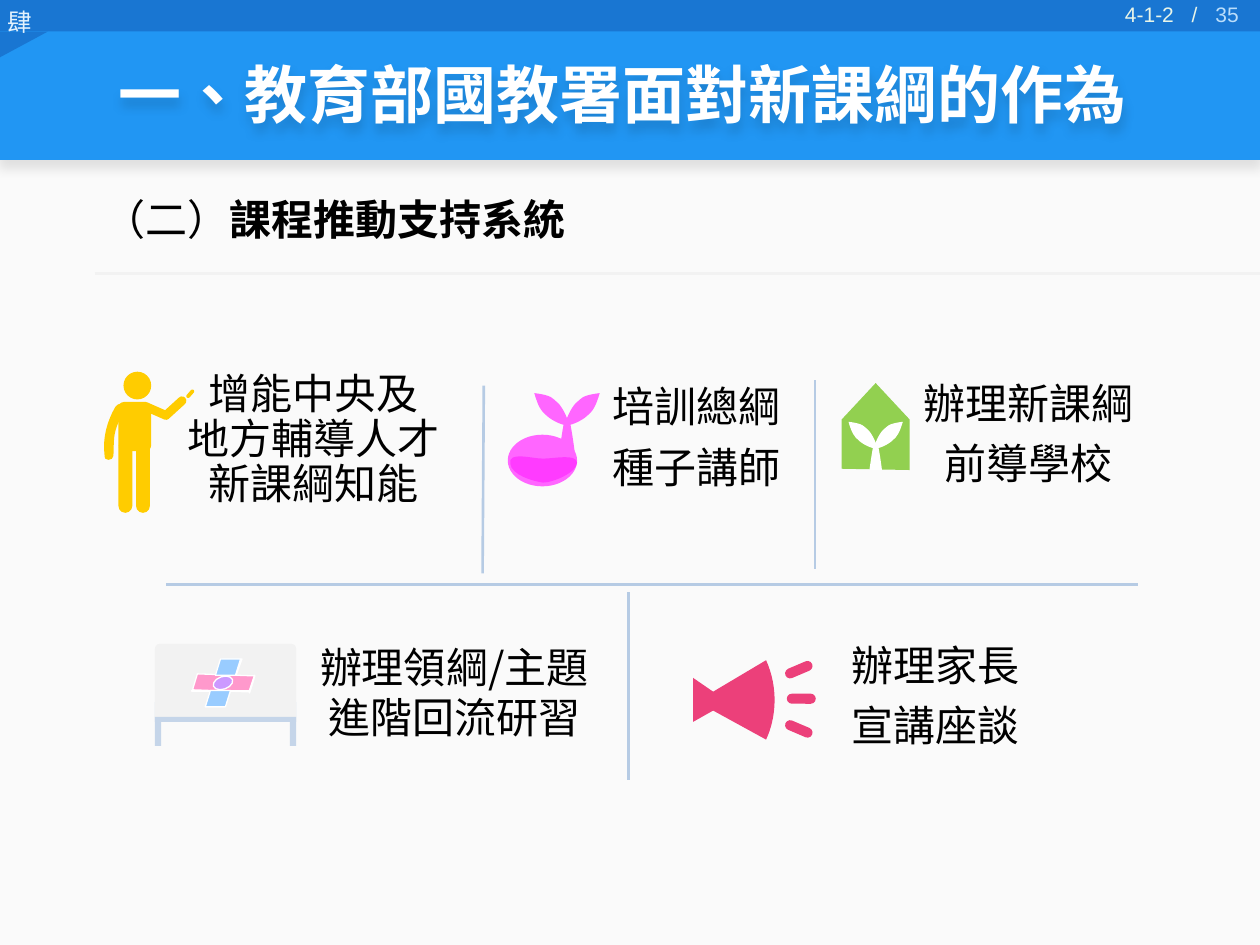
from lxml.etree import SubElement
from pptx import Presentation
from pptx.dml.color import RGBColor
from pptx.enum.shapes import MSO_CONNECTOR, MSO_SHAPE
from pptx.enum.text import MSO_ANCHOR, MSO_AUTO_SIZE, PP_ALIGN
from pptx.oxml.ns import qn
from pptx.util import Inches, Pt

COLORS = {
    "page": "FAFAFA", "header": "2196F3", "bar": "1976D2", "white": "FFFFFF", "black": "000000",
    "chapter": "E3F2FD", "number": "BBDEFB", "section": "E8F5E9", "divider": "B6CBE4",
    "rule": "F2F2F2", "green": "92D050", "yellow": "FFCC00", "pink": "FF66FF", "magenta": "FF3BFF",
    "frame": "C5D5E9", "rose": "FF99CC", "sky": "99CCFF", "lilac": "CC99FF", "red": "EC407A",
}
CJK = "Noto Sans CJK SC"
RECT, ROUND, OVAL = MSO_SHAPE.RECTANGLE, MSO_SHAPE.ROUNDED_RECTANGLE, MSO_SHAPE.OVAL
SLANTED = MSO_SHAPE.PARALLELOGRAM

presentation = Presentation()
presentation.slide_width, presentation.slide_height = Inches(10), Inches(7.5)
slide = presentation.slides.add_slide(presentation.slide_layouts[6])


def add_preset(kind, box, color, adjustment=None, rotation=0, outlined=False):
    shape = slide.shapes.add_shape(kind, *map(Inches, box))
    shape.shadow.inherit = False
    shape.rotation = rotation
    if adjustment is not None:
        shape.adjustments[0] = adjustment
    shape.fill.solid()
    shape.fill.fore_color.rgb = RGBColor.from_string(COLORS[color])
    if outlined:
        shape.line.color.rgb = RGBColor.from_string(COLORS["white"])
        shape.line.width = Pt(0.75)
    else:
        shape.line.fill.background()
    return shape


def add_outline(segments, color, origin=(0, 0), scale=(1, 1)):
    """Draw a closed outline: pairs are straight corners, six numbers are a cubic curve."""
    points = [segment[i:i + 2] for segment in segments for i in range(0, len(segment), 2)]
    placed = [tuple(Inches(origin[axis] + scale[axis] * point[axis]) for axis in (0, 1))
              for point in points]
    builder = slide.shapes.build_freeform(*placed[0])
    builder.add_line_segments(placed[1:], close=True)
    shape = builder.convert_to_shape()
    corners = iter(list(shape._element.spPr.iter(qn("a:lnTo"))))
    for segment in segments[1:]:
        corner = next(corners)
        if len(segment) == 6:
            corner.tag = qn("a:cubicBezTo")
            for _ in range(2):
                extra = next(corners)
                corner.append(extra[0])
                extra.getparent().remove(extra)
    shape.shadow.inherit = False
    shape.fill.solid()
    shape.fill.fore_color.rgb = RGBColor.from_string(COLORS[color])
    shape.line.fill.background()
    return shape


# Page and header
add_preset(RECT, (-0.01, 0.44, 10.03, 7.06), "page")
header = add_preset(ROUND, (-0.01, 0, 10.01, 1.27), "header", 0)
add_preset(ROUND, (-0.01, -0.02, 10.01, 0.27), "bar", 0)
add_outline([(-0.01, 0.25), (-0.01, 0.32, -0.01, 0.39, -0.01, 0.46), (0.38, 0.25)], "bar")

# Teacher
add_preset(MSO_SHAPE.FLOWCHART_CONNECTOR, (0.98, 2.95, 0.22, 0.22), "yellow")
add_preset(ROUND, (0.94, 3.19, 0.26, 0.39), "yellow")
for box, rotation in (
    ((0.94, 3.49, 0.11, 0.58), 0), ((1.08, 3.49, 0.11, 0.58), 0),
    ((1.35, 3.12, 0.07, 0.23), 47.7), ((1.21, 3.15, 0.07, 0.23), 293.6),
    ((1.47, 3.11, 0.08, 0.03), 311.4),
):
    add_preset(ROUND, box, "yellow", 0.5, rotation)
add_outline([(0.99, 3.27), (1, 3.23, 0.99, 3.21, 0.98, 3.21), (0.95, 3.19, 0.92, 3.22, 0.91, 3.24),
             (0.8, 3.44, 0.83, 3.59, 0.83, 3.61), (0.83, 3.64, 0.84, 3.65, 0.86, 3.65),
             (0.88, 3.65, 0.9, 3.64, 0.9, 3.62), (0.91, 3.53, 0.88, 3.42, 0.99, 3.27)], "yellow")

# House and seed, each with the same sprout
add_outline([(6.68, 3.72), (6.68, 3.33), (6.95, 3.04), (7.22, 3.33),
             (7.22, 3.46, 7.22, 3.59, 7.22, 3.73)], "green")
leaf = [(0.01, 0.03), (0.02, 0.01, -0.03, -0.1, -0.07, -0.14),
        (-0.12, -0.18, -0.11, -0.2, -0.26, -0.22), (-0.23, -0.12, -0.21, -0.08, -0.16, -0.04),
        (-0.12, 0, -0.01, 0.05, 0.01, 0.03)]
stem = [(-0.02, 0), (0.02, 0), (0.03, 0.03, 0.05, 0.16, 0.06, 0.24), (-0.06, 0.24),
        (-0.05, 0.17, -0.03, 0.03, -0.02, 0)]
for origin, size, color in (((6.95, 3.53), 0.83, "white"), ((4.5, 3.34), 1, "pink")):
    for outline, side in ((leaf, 1), (stem, 1), (leaf, -1)):
        add_outline(outline, color, origin, (side * size, size))
add_preset(OVAL, (4.03, 3.45, 0.55, 0.41), "pink")
add_outline([(4.05, 3.68), (4.03, 3.58, 4.22, 3.64, 4.31, 3.64), (4.4, 3.64, 4.57, 3.6, 4.58, 3.67),
             (4.58, 3.75, 4.39, 3.83, 4.31, 3.83), (4.23, 3.82, 4.06, 3.77, 4.05, 3.68)], "magenta")

# Table with crossed sheets
for left in (1.23, 2.3):
    add_preset(RECT, (left, 5.57, 0.05, 0.35), "frame")
add_preset(ROUND, (1.23, 5.11, 1.12, 0.62), "rule", 0.06)
add_preset(RECT, (1.77, 5.15, 0.04, 1.12), "frame", rotation=270)
add_preset(SLANTED, (1.63, 5.23, 0.29, 0.38), "white", 0.47, outlined=True)
sheet = add_preset(SLANTED, (1.65, 5.2, 0.25, 0.44), "rose", 0.47, 287, True)
sheet._element.spPr.find(qn("a:xfrm")).set("flipV", "1")
add_preset(RECT, (1.52, 5.48, 0.46, 0.01), "rose", outlined=True)
for left, top in ((1.63, 5.48), (1.71, 5.23)):
    add_preset(SLANTED, (left, top, 0.2, 0.13), "sky", 0.31, outlined=True)
add_preset(OVAL, (1.69, 5.37, 0.16, 0.1), "lilac", rotation=341.2, outlined=True)
edge = add_outline([(1.98, 5.5), (1.98, 5.48), (2.02, 5.36), (2.02, 5.37)], "rose")
edge.line.color.rgb = RGBColor.from_string(COLORS["white"])
edge.line.width = Pt(0.75)

# Megaphone
add_outline([(5.5, 5.38), (5.5, 5.5, 5.5, 5.62, 5.5, 5.73), (5.66, 5.64), (6.08, 5.87),
             (6.16, 5.7, 6.18, 5.46, 6.08, 5.24), (5.66, 5.49)], "red")
for left, top, rotation in ((6.32, 5.43, 270), (6.3, 5.2, 246.9), (6.3, 5.67, 293.1)):
    add_preset(ROUND, (left, top, 0.08, 0.23), "red", 0.5, rotation)
add_outline([(5.98, 5.55), (5.98, 5.4, 6.03, 5.27, 6.05, 5.27), (6.08, 5.28, 6.14, 5.41, 6.14, 5.56),
             (6.14, 5.7, 6.08, 5.81, 6.05, 5.81), (6.03, 5.81, 5.98, 5.69, 5.98, 5.55)], "red")

# Dividers
for color, *ends in (
    ("divider", 1.32, 4.64, 9.03, 4.64), ("divider", 3.84, 3.06, 3.83, 4.55),
    ("divider", 6.47, 3.02, 6.47, 4.52), ("divider", 4.99, 4.7, 4.99, 6.19),
    ("rule", 0.75, 2.17, 10.04, 2.17),
):
    connector = slide.shapes.add_connector(MSO_CONNECTOR.STRAIGHT, *map(Inches, ends))
    connector.line.color.rgb = RGBColor.from_string(COLORS[color])
    connector.line.width = Pt(1.5)
    SubElement(connector._element.spPr, qn("a:effectLst"))

# Texts: box, paragraphs of (text, bold) runs, font, colour, paragraph format, frame format
body = {"size": Pt(24), "name": CJK}
small = {"size": Pt(12), "name": "Arial"}
grow = {"word_wrap": True, "auto_size": MSO_AUTO_SIZE.SHAPE_TO_FIT_TEXT}
middle = {"word_wrap": True, "vertical_anchor": MSO_ANCHOR.MIDDLE}
spaced = {"line_spacing": 0.9, "space_after": Pt(8.4)}
centered = {"alignment": PP_ALIGN.CENTER}
texts = [
    ((-0.04, 0.01, 0.4, 0.34), [[("肆", False)]], {"size": Pt(14), "name": CJK}, "chapter", {},
     {**grow, "word_wrap": False}),
    ((0.72, 1.49, 7.22, 0.5), [[("（二）", False), ("課程推動支持系統", True)]], body, "black",
     {"space_after": Pt(8.4)}, grow),
    ((7.08, 2.99, 2.17, 0.97), [[("辦理新課綱", False)], [("前導學校", False)]], body, "black",
     {**spaced, **centered}, grow),
    ((1.14, 2.91, 2.69, 1.19), [[("增能中央及\v地方輔導人才\v新課綱知能", False)]], body, "black",
     {**spaced, **centered}, grow),
    ((4.64, 3.02, 1.78, 0.97), [[("培訓總綱", False)], [("種子講師", False)]], body, "black",
     {**spaced, **centered}, grow),
    ((2.43, 5.04, 2.35, 0.91), [[("辦理領綱/主題進階回流研習", False)]], body, "black", centered, grow),
    ((6.66, 5.07, 2.04, 0.97), [[("辦理家長", False)], [("宣講座談", False)]], body, "black",
     spaced, grow),
    ((7.6, -0.09, 2.33, 0.4), [[("35", False)]], small, "number",
     {"alignment": PP_ALIGN.RIGHT}, middle),
    ((8.83, -0.04, 0.82, 0.3), [[("4-1-2\t/", False)]], small, "section", {}, grow),
    ((0.84, 0.21, 9.16, 1.06), [[("一、教育部國教署面對新課綱的作為", True)]],
     {"size": Pt(36), "name": CJK}, "white", {}, middle),
]
for box, paragraphs, font_format, color, paragraph_format, frame_format in texts:
    textbox = slide.shapes.add_textbox(*map(Inches, box))
    frame = textbox.text_frame
    for name, value in frame_format.items():
        setattr(frame, name, value)
    for index, runs in enumerate(paragraphs):
        paragraph = frame.add_paragraph() if index else frame.paragraphs[0]
        for name, value in paragraph_format.items():
            setattr(paragraph, name, value)
        for text, bold in runs:
            for part_index, part in enumerate(text.split("\v")):
                if part_index:
                    paragraph.add_line_break()
                run = paragraph.add_run()
                run.text = part
                run.font.bold = bold
                run.font.color.rgb = RGBColor.from_string(COLORS[color])
                for name, value in font_format.items():
                    setattr(run.font, name, value)
                run.font._element.set("lang", "zh-TW")
                SubElement(run.font._element, qn("a:ea"), typeface=font_format["name"])
                if "\t" in part:
                    tabs = SubElement(paragraph._p.get_or_add_pPr(), qn("a:tabLst"))
                    SubElement(tabs, qn("a:tab"), pos=str(Inches(0.53)), algn="l")
title = textbox

for shape, opacity in ((header, 10), (title, 15)):
    shape.shadow.inherit = False
    effects = shape._element.spPr.find(qn("a:effectLst"))
    shadow = SubElement(effects, qn("a:outerShdw"), blurRad=str(Pt(6)), dist=str(Pt(4)),
                        dir="5400000", algn="t", rotWithShape="0")
    shadow_color = SubElement(shadow, qn("a:srgbClr"), val=COLORS["black"])
    SubElement(shadow_color, qn("a:alpha"), val=str(opacity * 1000))

presentation.save("out.pptx")
